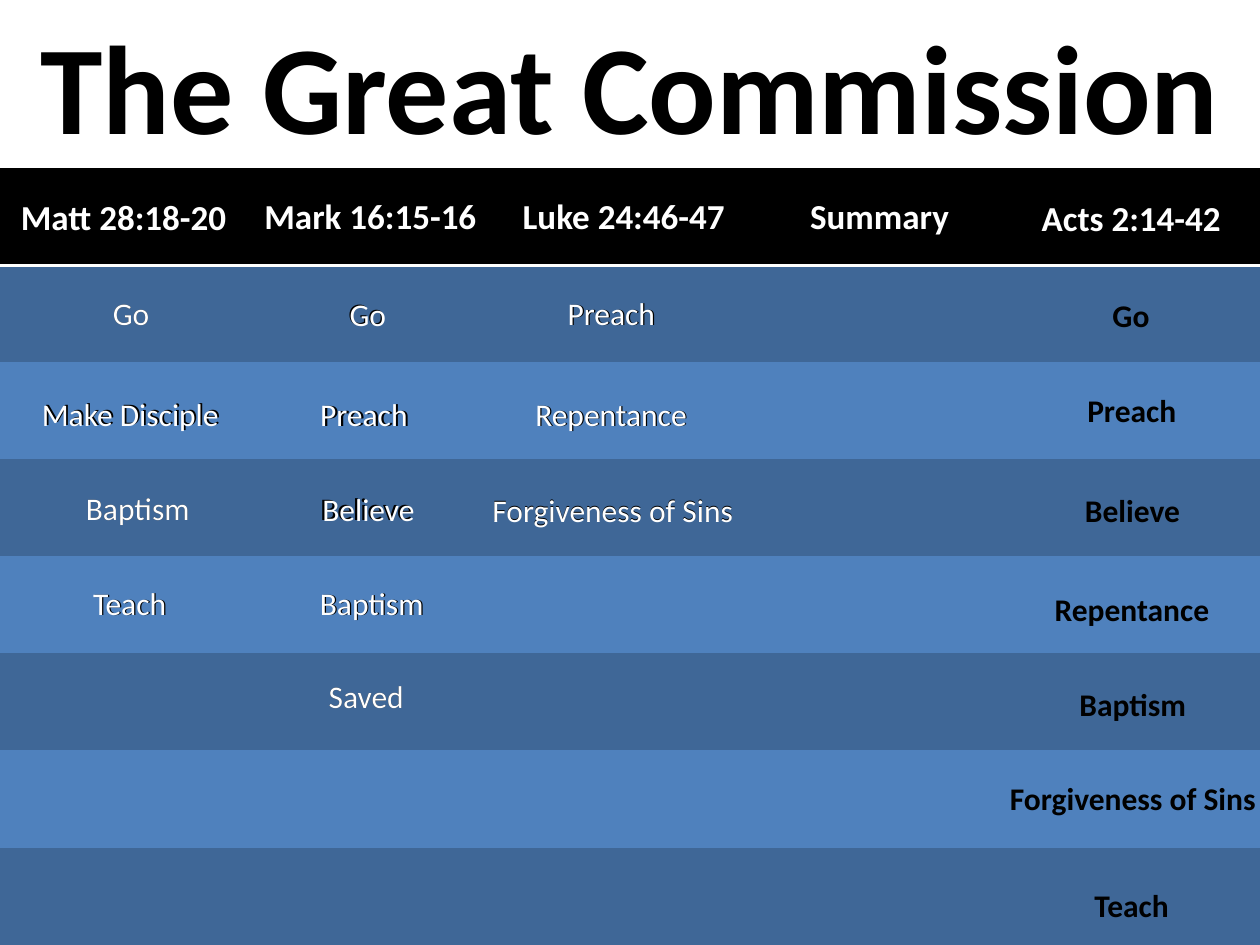
from dataclasses import dataclass

from lxml import etree
from pptx import Presentation
from pptx import util as u
from pptx.dml.color import RGBColor
from pptx.enum import text as t
from pptx.oxml import ns

COLOURS = {
    "black": "000000",
    "white": "FFFFFF",
    "dark_blue": "3F6797",
    "light_blue": "4F81BD",
}
FONT = "Calibri"
NO_STYLE = "{2D5ABB26-0587-4C30-8999-92F81FD0307C}"
SLIDE_WIDTH, SLIDE_HEIGHT = 720, 540
TITLE_HEIGHT = 96
ROWS, COLUMNS = 8, 5


@dataclass(frozen=True)
class Label:
    text: str
    left: float
    top: float
    width: float
    height: float = 29.1
    size: float = 18
    colour: str = "black"
    bold: bool = True
    wrap: bool = False


@dataclass(frozen=True)
class ShadowedLabel:
    text: str
    left: float
    top: float
    width: float
    shift_x: float = 0
    shift_y: float = 0
    wrap: bool = False

    def layer(self, colour: str, shift_x: float = 0, shift_y: float = 0) -> Label:
        return Label(self.text, self.left + shift_x, self.top + shift_y, self.width,
                     colour=colour, bold=False, wrap=self.wrap)


def heading(text: str, left: float, top: float, width: float) -> Label:
    return Label(text, left, top, width, height=31.5, size=20, colour="white")


HEADINGS = [
    heading("Matt 28:18-20", 4.8, 108, 133.2),
    heading("Mark 16:15-16", 144, 107.6, 136.8),
    heading("Luke 24:46-47", 291.6, 107.6, 131),
    heading("Summary", 455.8, 107.6, 94.3),
    heading("Acts 2:14-42", 588.2, 108.7, 117.4),
]

GOSPEL_LABELS = [
    ShadowedLabel("Go", 57.4, 164.6, 36),
    ShadowedLabel("Make Disciple", 16.8, 222.2, 117, 1, -0.4),
    ShadowedLabel("Baptism", 42, 275.8, 74.2),
    ShadowedLabel("Teach", 46.1, 330, 56.9, 0.7),
    ShadowedLabel("Go", 192.7, 165.3, 36, -0.7, -0.7),
    ShadowedLabel("Preach", 175.9, 222, 64.8, 1.2),
    ShadowedLabel("Believe", 177.1, 276.3, 67.7, -1.2, -0.5),
    ShadowedLabel("Baptism", 175.7, 330, 74.2, 0.7),
    ShadowedLabel("Saved", 180.7, 383.5, 58.3),
    ShadowedLabel("Preach", 317.3, 164.6, 64.8, 0.7),
    ShadowedLabel("Repentance", 298.8, 222, 102.2, 0.7),
    ShadowedLabel("Forgiveness of Sins", 274.3, 277.2, 152.6, 0, -0.7, wrap=True),
]

ACTS_LABELS = [
    Label("Go", 628.6, 165.6, 37),
    Label("Preach", 614.2, 220, 65.5),
    Label("Believe", 612.9, 277.2, 69.1),
    Label("Repentance", 595.6, 333.4, 103.7),
    Label("Baptism", 609.8, 388.1, 76.3),
    Label("Forgiveness of Sins", 570, 441.4, 156.2),
    Label("Teach", 618.3, 502.6, 56.9),
]


def rgb(name: str) -> RGBColor:
    return RGBColor.from_string(COLOURS[name])


def add_run(paragraph, content: str, size: float, colour: str, bold: bool) -> None:
    run = paragraph.add_run()
    run.text = content
    run.font.name = FONT
    run.font.size = u.Pt(size)
    run.font.bold = bold
    run.font.color.rgb = rgb(colour)


def add_title(slide) -> None:
    title = slide.shapes.title
    title.left, title.top = u.Pt(0), u.Pt(0)
    title.width, title.height = u.Pt(SLIDE_WIDTH), u.Pt(TITLE_HEIGHT)
    frame = title.text_frame
    frame.auto_size = t.MSO_AUTO_SIZE.NONE
    frame.vertical_anchor = t.MSO_ANCHOR.MIDDLE
    paragraph = frame.paragraphs[0]
    paragraph.alignment = t.PP_ALIGN.CENTER
    add_run(paragraph, "The Great Commission", 72, "black", True)


def add_bottom_border(cell, colour: str, width: float) -> None:
    properties = cell._tc.get_or_add_tcPr()
    line = etree.Element(ns.qn("a:lnB"), w=str(u.Pt(width)))
    fill = etree.SubElement(line, ns.qn("a:solidFill"))
    etree.SubElement(fill, ns.qn("a:srgbClr"), val=COLOURS[colour])
    properties.insert(0, line)


def add_grid(slide) -> None:
    frame = slide.shapes.add_table(
        ROWS, COLUMNS, u.Pt(0), u.Pt(TITLE_HEIGHT),
        u.Pt(SLIDE_WIDTH), u.Pt(SLIDE_HEIGHT - TITLE_HEIGHT))
    table = frame.table
    table._tbl.tblPr.find(ns.qn("a:tableStyleId")).text = NO_STYLE
    for row_index, row in enumerate(table.rows):
        band = "dark_blue" if row_index % 2 else "light_blue"
        for cell in row.cells:
            cell.fill.solid()
            cell.fill.fore_color.rgb = rgb(band if row_index else "black")
            if row_index == 0:
                add_bottom_border(cell, "white", 2)


def add_label(slide, label: Label) -> None:
    box = slide.shapes.add_textbox(
        u.Pt(label.left), u.Pt(label.top), u.Pt(label.width), u.Pt(label.height))
    frame = box.text_frame
    frame.word_wrap = label.wrap
    frame.auto_size = t.MSO_AUTO_SIZE.SHAPE_TO_FIT_TEXT
    add_run(frame.paragraphs[0], label.text, label.size, label.colour, label.bold)


def main() -> None:
    presentation = Presentation()
    presentation.slide_width = u.Pt(SLIDE_WIDTH)
    presentation.slide_height = u.Pt(SLIDE_HEIGHT)
    slide = presentation.slides.add_slide(presentation.slide_layouts[5])
    add_title(slide)
    add_grid(slide)
    shadows = [label.layer("black", label.shift_x, label.shift_y) for label in GOSPEL_LABELS]
    faces = [label.layer("white") for label in GOSPEL_LABELS]
    for label in shadows + faces + HEADINGS + ACTS_LABELS:
        add_label(slide, label)
    presentation.save("out.pptx")


if __name__ == "__main__":
    main()
